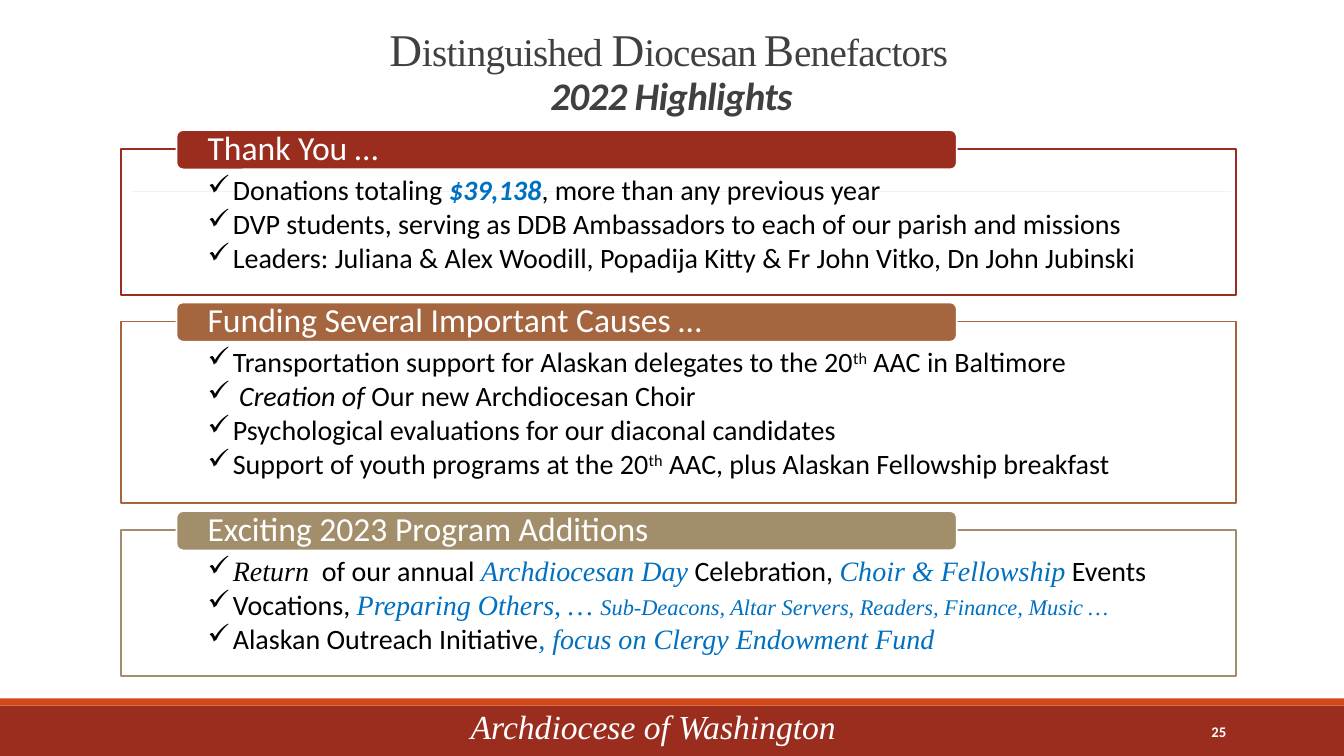
from lxml import etree
from pptx import Presentation
from pptx.dml.color import RGBColor
from pptx.enum.shapes import MSO_CONNECTOR, MSO_SHAPE
from pptx.enum.text import MSO_ANCHOR as ANCHOR, PP_ALIGN as ALIGN
from pptx.oxml.ns import qn
from pptx.util import Inches, Pt

WHITE = RGBColor(0xFF, 0xFF, 0xFF)
BLACK = RGBColor(0, 0, 0)
BLUE = RGBColor(0x00, 0x70, 0xC0)
CHARCOAL = RGBColor(0x40, 0x40, 0x40)
GREY = RGBColor(0x80, 0x80, 0x80)
RED = RGBColor(0x9B, 0x2D, 0x1F)
ORANGE = RGBColor(0xD3, 0x48, 0x17)
BROWN = RGBColor(0xA4, 0x65, 0x3F)
TAN = RGBColor(0xA2, 0x8E, 0x6A)
SERIF = "Times New Roman"

# Run formats: what differs from the format of the whole text
ITALIC = dict(italic=True)
SUPER = dict(baseline=30)
AMOUNT = dict(color=BLUE, bold=True, italic=True)
RETURN = dict(font=SERIF, italic=True)
ACCENT = dict(font=SERIF, italic=True, color=BLUE)
SMALL = dict(ACCENT, size=16)
CAPITAL = dict(font=SERIF, size=32.4)
LOWER = dict(font=SERIF)

# A paragraph is a list of (text, run format); "\n" breaks the line
TITLE = [
    ("D", CAPITAL), ("istinguished ", LOWER), ("D", CAPITAL), ("iocesan", LOWER),
    (" ", dict(font=SERIF, size=19.8)), ("B", CAPITAL), ("enefactors", LOWER),
    (" ", dict(font=SERIF, size=39.6)), ("\n", {}),
    ("2022 Highlights ", dict(bold=True, italic=True)),
]

# Heading, colour, top, height, bullets
SECTIONS = [
    ("Thank You …", RED, 1.48, 1.45, [
        [("Donations totaling ", {}), ("$39,138", AMOUNT),
         (", more than any previous year", {})],
        [("DVP students, serving as DDB Ambassadors to each of our parish and missions", {})],
        [("Leaders: Juliana & Alex Woodill, Popadija Kitty & Fr John Vitko, "
          "Dn John Jubinski", {})],
    ]),
    ("Funding Several Important Causes …", BROWN, 3.19, 1.8, [
        [("Transportation support for Alaskan delegates to the 20", {}), ("th", SUPER),
         (" AAC in Baltimore", {})],
        [(" Creation of ", ITALIC), ("Our new Archdiocesan Choir", {})],
        [("Psychological evaluations for our diaconal candidates", {})],
        [("Support of youth programs at the 20", {}), ("th", SUPER),
         (" AAC, plus Alaskan Fellowship breakfast", {})],
    ]),
    ("Exciting 2023 Program Additions", TAN, 5.26, 1.45, [
        [("Return", RETURN), ("  of our annual ", {}), ("Archdiocesan Day", ACCENT),
         (" Celebration, ", {}), ("Choir & Fellowship", ACCENT), (" Events", {})],
        [("Vocations, ", {}), ("Preparing Others, … ", ACCENT),
         ("Sub-Deacons, Altar Servers, Readers, Finance, Music", SMALL),
         (" ", dict(ACCENT, size=14)), ("…", SMALL)],
        [("Alaskan Outreach Initiative", {}), (", focus on Clergy Endowment Fund", ACCENT)],
    ]),
]
BOX_LEFT, BOX_WIDTH = 1.2, 11.06
TAB_LEFT, TAB_WIDTH, TAB_HEIGHT, TAB_RISE = 1.75, 7.74, 0.39, 0.19


def add_run(p, text, font="Calibri", size=20, color=BLACK, bold=False, italic=False,
            baseline=0, spacing=0):
    r = p.add_run()
    r.text = text
    f = r.font
    f.name, f.size, f.bold, f.italic = font, Pt(size), bold, italic
    f.color.rgb = color
    if baseline:
        r._r.get_or_add_rPr().set("baseline", str(baseline * 1000))
    if spacing:
        r._r.get_or_add_rPr().set("spc", str(int(spacing * 100)))


def write(sp, paragraphs, anchor=ANCHOR.TOP, insets=(0.1, 0.05, 0.1, 0.05),
          align=ALIGN.LEFT, line=1.0, after=0, bullet=None, **base):
    """Fill a shape with paragraphs of runs; base is the format the runs start from."""
    tf = sp.text_frame
    tf.word_wrap = True
    tf.vertical_anchor = anchor
    tf.margin_left, tf.margin_top, tf.margin_right, tf.margin_bottom = map(Inches, insets)
    for i, runs in enumerate(paragraphs):
        p = tf.add_paragraph() if i else tf.paragraphs[0]
        p.alignment, p.line_spacing, p.space_after = align, line, Pt(after)
        if bullet:
            pPr = p._p.get_or_add_pPr()
            pPr.set("marL", str(Inches(0.25)))
            pPr.set("indent", str(-Inches(0.25)))
            etree.SubElement(pPr, qn("a:buChar")).set("char", bullet)
        for text, style in runs:
            if text == "\n":
                p.add_line_break()
            else:
                add_run(p, text, **{**base, **style})


def add_box(s, kind, at, fill, line=None, opacity=100):
    sp = s.shapes.add_shape(kind, *map(Inches, at))
    sp.shadow.inherit = False
    sp.fill.solid()
    sp.fill.fore_color.rgb = fill
    if opacity < 100:
        clr = sp._element.spPr.find(qn("a:solidFill"))[0]
        etree.SubElement(clr, qn("a:alpha")).set("val", str(opacity * 1000))
    if line is None:
        sp.line.fill.background()
    else:
        sp.line.color.rgb = line
        sp.line.width = Pt(1.25)
    return sp


def add_text(s, at, paragraphs, **fmt):
    write(s.shapes.add_textbox(*map(Inches, at)), paragraphs, **fmt)


def add_rule(s, x1, x2, y):
    c = s.shapes.add_connector(MSO_CONNECTOR.STRAIGHT, *map(Inches, (x1, y, x2, y)))
    c.line.color.rgb = GREY
    c.line.width = Pt(0.5)
    etree.SubElement(c._element.spPr, qn("a:effectLst"))


def add_section(s, heading, color, top, height, bullets):
    box = add_box(s, MSO_SHAPE.RECTANGLE, (BOX_LEFT, top, BOX_WIDTH, height),
                  WHITE, color, opacity=90)
    write(box, bullets, insets=(0.86, 0.27, 0.86, 0.16), line=0.9, after=2.7, bullet="✓")
    tab = add_box(s, MSO_SHAPE.ROUNDED_RECTANGLE,
                  (TAB_LEFT, top - TAB_RISE, TAB_WIDTH, TAB_HEIGHT), color, WHITE)
    write(tab, [[(heading, {})]], anchor=ANCHOR.MIDDLE, insets=(0.29, 0, 0.29, 0),
          line=0.9, size=24, color=WHITE)


def main():
    prs = Presentation()
    prs.slide_width, prs.slide_height = Inches(13.33), Inches(7.5)
    s = prs.slides.add_slide(prs.slide_layouts[6])

    add_box(s, MSO_SHAPE.RECTANGLE, (0, 7, 13.33, 0.5), RED)
    add_box(s, MSO_SHAPE.RECTANGLE, (0, 6.93, 13.33, 0.07), ORANGE)
    add_rule(s, 1.31, 12.21, 1.9)
    add_text(s, (1.2, 0.15, 11, 1.07), [TITLE], anchor=ANCHOR.BOTTOM, align=ALIGN.CENTER,
             line=0.85, size=27.9, color=CHARCOAL, spacing=-0.5)
    for section in SECTIONS:
        add_section(s, *section)
    add_text(s, (10.83, 7.06, 1.43, 0.4), [[("25", {})]], anchor=ANCHOR.MIDDLE,
             align=ALIGN.RIGHT, after=6, size=10.5, color=WHITE, bold=True)
    add_text(s, (2.9, 6.95, 7.16, 0.5), [[("Archdiocese of Washington", {})]],
             align=ALIGN.CENTER, font=SERIF, size=24, color=WHITE, italic=True)
    prs.save("out.pptx")


if __name__ == "__main__":
    main()
